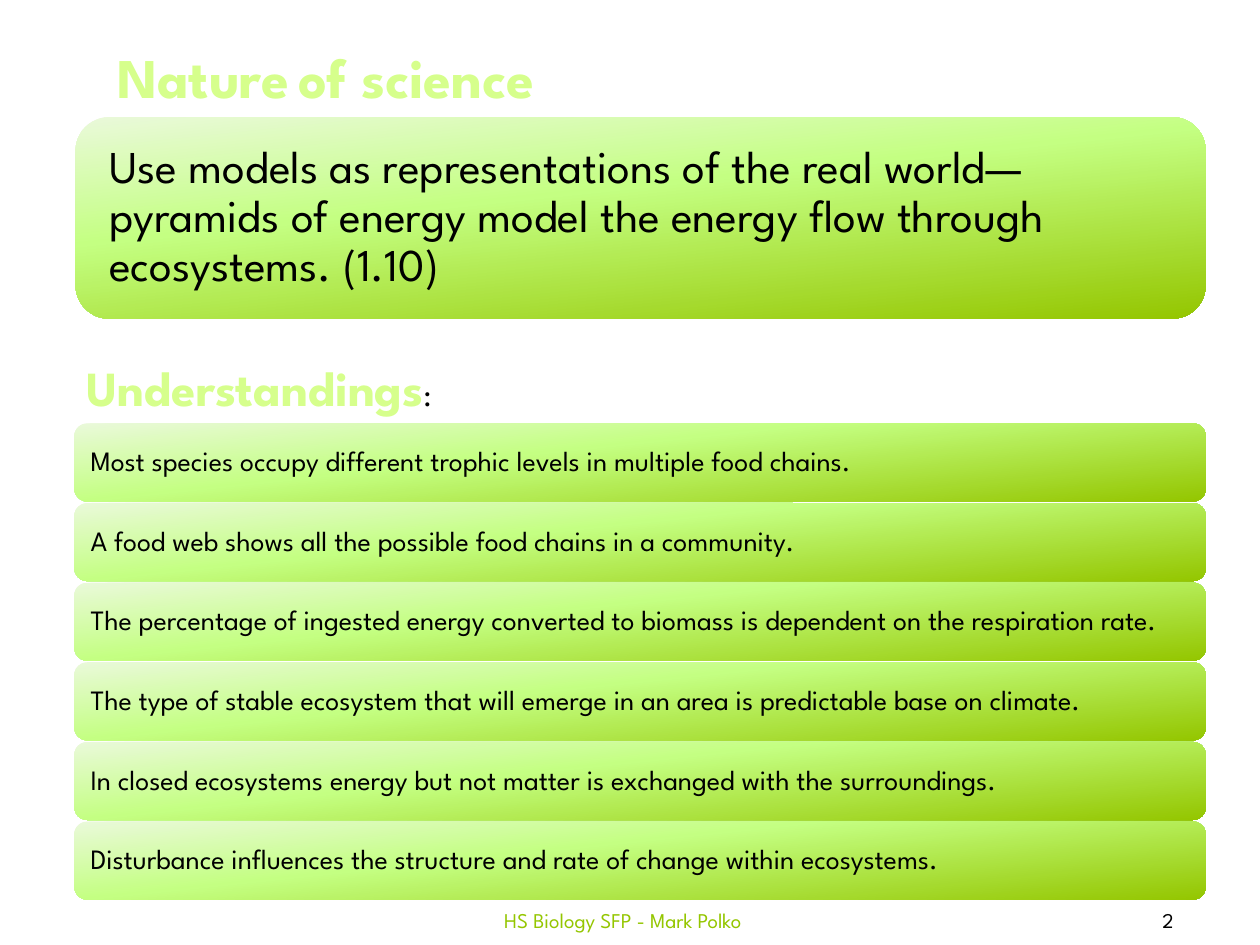
from lxml.etree import SubElement
from pptx import Presentation
from pptx.dml.color import RGBColor
from pptx.enum.shapes import MSO_SHAPE
from pptx.enum.text import MSO_ANCHOR, PP_ALIGN
from pptx.oxml.ns import qn
from pptx.util import Inches, Pt

FONT = "League Spartan"
BLACK = RGBColor(0x00, 0x00, 0x00)
GREEN = RGBColor(0x94, 0xC6, 0x00)
LIME = RGBColor(0xD6, 0xFF, 0x8C)
OUTLINE = RGBColor(0x43, 0x41, 0x28)
GRADIENT = [
    (0, RGBColor(0xEA, 0xF9, 0xDA)),
    (40, RGBColor(0xC4, 0xFF, 0x82)),
    (100, GREEN),
]
GRADIENT_ANGLE = 84

# Runs: text, size, colour, is heading
TITLE = [
    ("Nature", 32, LIME, True),
    (" ", 20, BLACK, False),
    ("of science", 32, LIME, True),
]
SUBTITLE = [("Understandings", 28, LIME, True), (":", 18, BLACK, False)]
MODEL_STATEMENT = (
    "Use models as representations of the real world—pyramids of energy "
    "model the energy flow through ecosystems. (1.10)"
)
UNDERSTANDINGS = [
    "Most species occupy different trophic levels in multiple food chains.",
    "A food web shows all the possible food chains in a community.",
    "The percentage of ingested energy converted to biomass is dependent on the respiration rate.",
    "The type of stable ecosystem that will emerge in an area is predictable base on climate.",
    "In closed ecosystems energy but not matter is exchanged with the surroundings.",
    "Disturbance influences the structure and rate of change within ecosystems.",
]
FOOTER = "HS Biology SFP - Mark Polko"
PAGE_NUMBER = "2"

LEFT, WIDTH = 0.59, 8.98
BAR_TOP, BAR_HEIGHT, BAR_PITCH = 3.36, 0.62, 0.632


def add_run(paragraph, text, size, color, heading=False):
    run = paragraph.add_run()
    run.text = text
    font = run.font
    font.name, font.size, font.bold = FONT, Pt(size), heading or None
    font.color.rgb = color
    if heading:
        properties = run._r.get_or_add_rPr()
        line = properties.makeelement(qn("a:ln"), {"w": str(Pt(1))})
        properties.insert(0, line)
        fill = SubElement(line, qn("a:solidFill"))
        SubElement(fill, qn("a:srgbClr"), val=str(OUTLINE))


def fill_gradient(shape):
    shape.fill.gradient()
    gradient = shape._element.spPr.find(qn("a:gradFill"))
    for child in list(gradient):
        gradient.remove(child)
    stops = SubElement(gradient, qn("a:gsLst"))
    for percent, color in GRADIENT:
        stop = SubElement(stops, qn("a:gs"), pos=str(percent * 1000))
        SubElement(stop, qn("a:srgbClr"), val=str(color))
    SubElement(gradient, qn("a:lin"), ang=str(GRADIENT_ANGLE * 60000), scaled="0")


def add_panel(slide, box, text, size, inset):
    shape = slide.shapes.add_shape(MSO_SHAPE.ROUNDED_RECTANGLE, *map(Inches, box))
    shape.shadow.inherit = False
    shape.line.fill.background()
    fill_gradient(shape)
    frame = shape.text_frame
    frame.word_wrap = True
    frame.vertical_anchor = MSO_ANCHOR.MIDDLE
    frame.margin_left = frame.margin_right = Inches(inset)
    frame.margin_top = frame.margin_bottom = Inches(inset)
    paragraph = frame.paragraphs[0]
    paragraph.alignment = PP_ALIGN.LEFT
    paragraph.line_spacing = 0.9
    add_run(paragraph, text, size, BLACK)


def add_text(slide, box, runs, align, anchor=MSO_ANCHOR.TOP, wrap=False):
    frame = slide.shapes.add_textbox(*map(Inches, box)).text_frame
    frame.word_wrap = wrap
    frame.vertical_anchor = anchor
    paragraph = frame.paragraphs[0]
    paragraph.alignment = align
    for run in runs:
        add_run(paragraph, *run)


def main():
    presentation = Presentation()
    presentation.slide_width, presentation.slide_height = Inches(10), Inches(7.5)
    slide = presentation.slides.add_slide(presentation.slide_layouts[6])

    for box, text, color in [
        ((8.54, 7.1, 1.46, 0.4), PAGE_NUMBER, BLACK),
        ((3.03, 7.1, 3.83, 0.4), FOOTER, GREEN),
    ]:
        add_text(slide, box, [(text, 12, color)], PP_ALIGN.CENTER, MSO_ANCHOR.MIDDLE, True)

    for row, text in enumerate(UNDERSTANDINGS):
        top = BAR_TOP + row * BAR_PITCH
        add_panel(slide, (LEFT, top, WIDTH, BAR_HEIGHT), text, 16, 0.1)
    add_panel(slide, (LEFT + 0.01, 0.93, WIDTH - 0.01, 1.6), MODEL_STATEMENT, 26, 0.19)

    add_text(slide, (LEFT, 2.79, 3.2, 0.57), SUBTITLE, PP_ALIGN.LEFT)
    add_text(slide, (0.58, 0.29, 4.01, 0.64), TITLE, PP_ALIGN.CENTER)

    presentation.save("out.pptx")


if __name__ == "__main__":
    main()
